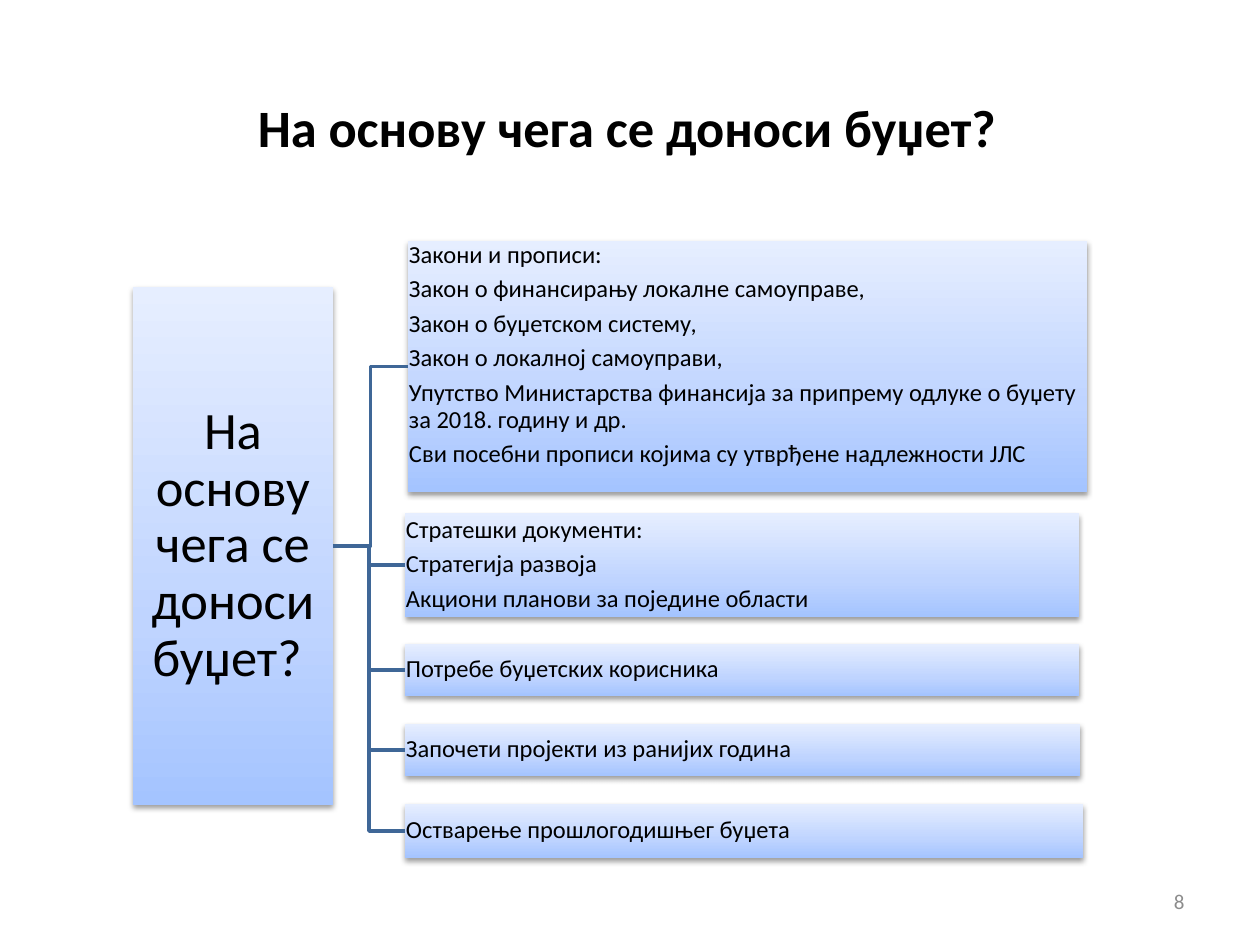
import copy

import lxml.etree
import pptx
import pptx.dml.color
import pptx.enum.shapes
import pptx.enum.text
import pptx.oxml.ns
import pptx.util

PX = 914400 // 126
FONT = "Calibri"
BLACK = "000000"
LINE_COLOUR = "3F6797"
GRADIENT = [(0, "A4C4FF"), (0.35, "BFD4FF"), (1, "E6EEFF")]
ALIGN = pptx.enum.text.PP_ALIGN
ANCHOR = pptx.enum.text.MSO_ANCHOR

TITLE = "На основу чега се доноси буџет?"
ROOT_BOX = (133, 287, 200, 518)
SOURCES = [
    ((408, 241, 679, 251), ANCHOR.TOP, [
        "Закони и прописи:",
        "Закон о финансирању локалне самоуправе,",
        "Закон о буџетском систему,",
        "Закон о локалној самоуправи,",
        "Упутство Министарства финансија за припрему одлуке о буџету за 2018. годину и др.",
        "Сви посебни прописи којима су утврђене надлежности ЈЛС",
    ]),
    ((405, 513, 674, 104), ANCHOR.MIDDLE, [
        "Стратешки документи:",
        "Стратегија развоја",
        "Акциони планови за поједине области",
    ]),
    ((405, 644, 674, 52), ANCHOR.MIDDLE, ["Потребе буџетских корисника"]),
    ((405, 724, 675, 52), ANCHOR.MIDDLE, ["Започети пројекти из ранијих година"]),
    ((405, 804, 678, 54), ANCHOR.MIDDLE, ["Остварење прошлогодишњег буџета"]),
]


def px(*values):
    """Turn whole pixels into EMU lengths."""
    return [pptx.util.Emu(value * PX) for value in values]


def rgb(value):
    """Turn a hex string into a colour."""
    return pptx.dml.color.RGBColor.from_string(value)


def add_run(paragraph, text, size, colour=BLACK, bold=False):
    """Add one formatted run to a paragraph."""
    run = paragraph.add_run()
    run.text = text
    run.font.name = FONT
    run.font.size = pptx.util.Pt(size)
    run.font.bold = bold
    run.font.color.rgb = rgb(colour)
    return run


def set_margins(text_frame, margin):
    """Give a text frame the same margin on all sides."""
    text_frame.margin_left, text_frame.margin_top = px(margin, margin)
    text_frame.margin_right, text_frame.margin_bottom = px(margin, margin)


def add_effects(shape):
    """Add an empty effect list, which also drops the theme shadow."""
    return lxml.etree.SubElement(
        shape._element.spPr, pptx.oxml.ns.qn("a:effectLst"))


def add_shadow(shape):
    """Give a shape a soft shadow below it."""
    qn = pptx.oxml.ns.qn
    shadow = lxml.etree.SubElement(
        add_effects(shape), qn("a:outerShdw"),
        blurRad="40000", dist="20000", dir="5400000", rotWithShape="0")
    colour = lxml.etree.SubElement(shadow, qn("a:srgbClr"), val=BLACK)
    lxml.etree.SubElement(colour, qn("a:alpha"), val="38000")


def fill_gradient(shape):
    """Fill a shape with the three-stop gradient, light at the top."""
    shape.fill.gradient()
    shape.fill.gradient_angle = 90
    first = shape._element.spPr.find(".//" + pptx.oxml.ns.qn("a:gs"))
    first.addnext(copy.deepcopy(first))
    for stop, (position, colour) in zip(shape.fill.gradient_stops, GRADIENT):
        stop.position = position
        stop.color.rgb = rgb(colour)


def add_box(slide, box, texts, size, align, anchor, margin):
    """Add a shaded rectangle with one paragraph for each text."""
    shape = slide.shapes.add_shape(
        pptx.enum.shapes.MSO_SHAPE.RECTANGLE, *px(*box))
    fill_gradient(shape)
    shape.line.fill.background()
    add_shadow(shape)
    text_frame = shape.text_frame
    text_frame.word_wrap = True
    text_frame.vertical_anchor = anchor
    set_margins(text_frame, margin)
    for index, text in enumerate(texts):
        paragraph = text_frame.add_paragraph() if index else text_frame.paragraphs[0]
        paragraph.alignment = align
        paragraph.line_spacing = 0.9
        paragraph.space_after = pptx.util.Pt(size / 3)
        add_run(paragraph, text, size)
    return shape


def add_branch(slide, root, source):
    """Join the root box to a source box with an elbow connector."""
    connector = slide.shapes.add_connector(
        pptx.enum.shapes.MSO_CONNECTOR.ELBOW, 0, 0, 0, 0)
    connector.begin_connect(root, 3)
    connector.end_connect(source, 1)
    connector.line.color.rgb = rgb(LINE_COLOUR)
    connector.line.width = pptx.util.Pt(2)
    add_effects(connector)


def format_title(slide):
    """Place and write the slide title."""
    title = slide.shapes.title
    title.left, title.top, title.width, title.height = px(60, 68, 1134, 117)
    title.text_frame.vertical_anchor = ANCHOR.MIDDLE
    paragraph = title.text_frame.paragraphs[0]
    paragraph.alignment = ALIGN.CENTER
    add_run(paragraph, TITLE, 30, bold=True)


def add_slide_number(slide):
    """Add the slide number as a field at the bottom right."""
    shape = slide.shapes.add_textbox(*px(903, 876, 294, 50))
    shape.text_frame.word_wrap = True
    shape.text_frame.vertical_anchor = ANCHOR.MIDDLE
    paragraph = shape.text_frame.paragraphs[0]
    paragraph.alignment = ALIGN.RIGHT
    add_run(paragraph, "8", 12, "8C8C8C")


def main():
    """Build the slide and save it."""
    presentation = pptx.Presentation()
    presentation.slide_width = pptx.util.Inches(10)
    presentation.slide_height = pptx.util.Inches(7.5)
    slide = presentation.slides.add_slide(presentation.slide_layouts[5])
    format_title(slide)
    add_slide_number(slide)
    root = add_box(slide, ROOT_BOX, [TITLE + " "], 30,
                   ALIGN.CENTER, ANCHOR.MIDDLE, 2)
    for box, anchor, texts in SOURCES:
        source = add_box(slide, box, texts, 14, ALIGN.LEFT, anchor, 1)
        add_branch(slide, root, source)
    presentation.save("out.pptx")


if __name__ == "__main__":
    main()
